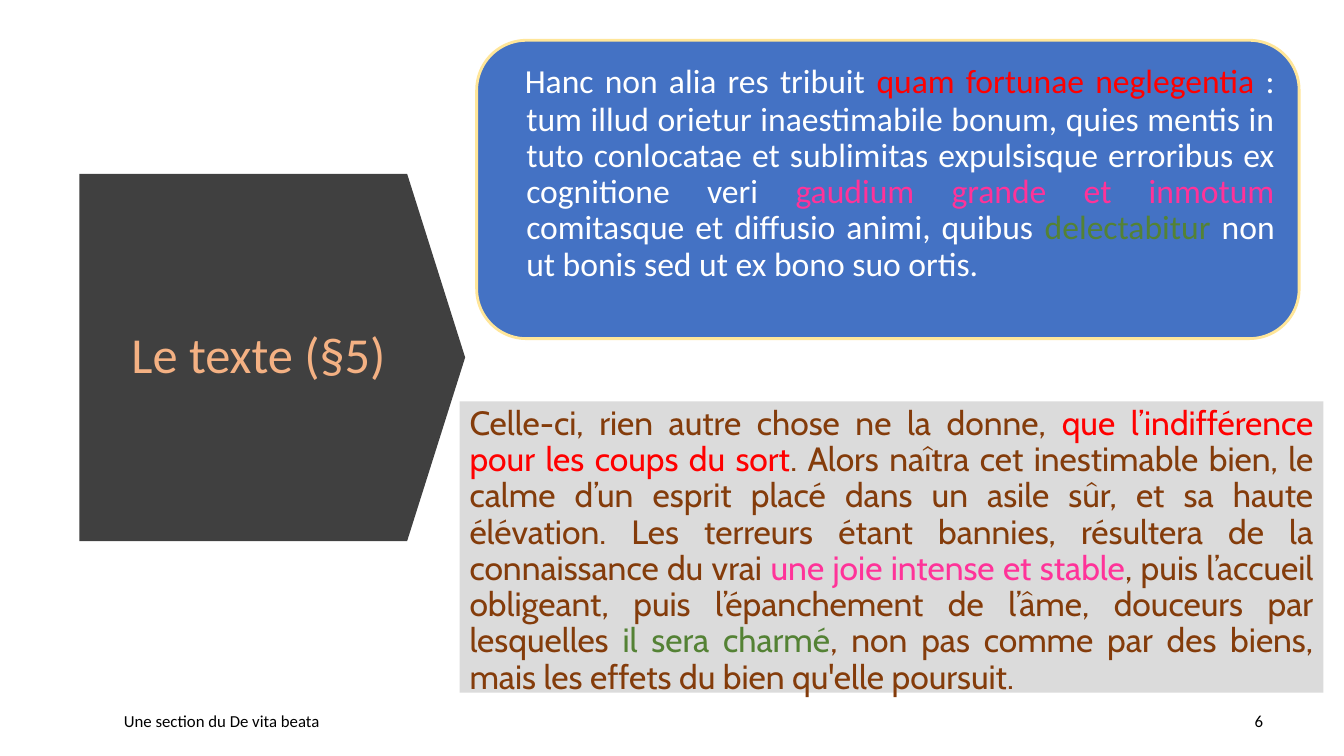
from dataclasses import dataclass
from typing import Optional

from pptx import Presentation
from pptx import util as u
from pptx.enum import shapes, text
from pptx.dml.color import RGBColor

COLORS = {
    "white": "FFFFFF", "black": "000000", "charcoal": "404040",
    "blue": "4472C4", "cream": "FFE699", "gray": "DBDBDB",
    "peach": "F4B183", "brown": "843C0B", "red": "FF0000",
    "pink": "FF3399", "green": "548235",
}
ALIGN = text.PP_ALIGN
ANCHOR = text.MSO_ANCHOR
SHAPE = shapes.MSO_SHAPE


@dataclass
class Run:
    text: str
    color: str
    size: Optional[float] = None


@dataclass
class Block:
    box: tuple[float, float, float, float]  # left, top, width, height
    runs: list[Run]
    size: float
    font: str = "Calibri"
    align: ALIGN = ALIGN.LEFT
    anchor: ANCHOR = ANCHOR.MIDDLE
    line_spacing: float = 1.0
    space_before: float = 0
    space_after: float = 0
    hanging: float = 0
    preset: Optional[SHAPE] = None
    fill: str = ""
    line: str = ""


def add_panel(slide, preset: SHAPE, box: tuple, fill: str, line: str = ""):
    """Add a filled preset shape without a shadow."""
    shape = slide.shapes.add_shape(preset, *map(u.Pt, box))
    shape.shadow.inherit = False
    shape.fill.solid()
    shape.fill.fore_color.rgb = RGBColor.from_string(COLORS[fill])
    if line:
        shape.line.color.rgb = RGBColor.from_string(COLORS[line])
        shape.line.width = u.Pt(2)
    else:
        shape.line.fill.background()
    return shape


def add_block(slide, block: Block) -> None:
    """Add one paragraph, in a panel or in a plain text box."""
    if block.preset is None:
        shape = slide.shapes.add_textbox(*map(u.Pt, block.box))
    else:
        shape = add_panel(slide, block.preset, block.box, block.fill, block.line)
    frame = shape.text_frame
    frame.word_wrap = True
    frame.vertical_anchor = block.anchor
    frame.margin_left = frame.margin_right = u.Pt(7.2)
    frame.margin_top = frame.margin_bottom = u.Pt(3.6)

    paragraph = frame.paragraphs[0]
    paragraph.alignment = block.align
    paragraph.line_spacing = block.line_spacing
    paragraph.space_before = u.Pt(block.space_before)
    paragraph.space_after = u.Pt(block.space_after)
    if block.hanging:
        properties = paragraph._p.get_or_add_pPr()
        properties.set("marL", str(u.Pt(block.hanging)))
        properties.set("indent", str(-u.Pt(block.hanging)))
    for item in block.runs:
        run = paragraph.add_run()
        run.text = item.text
        run.font.name = block.font
        run.font.size = u.Pt(item.size or block.size)
        run.font.color.rgb = RGBColor.from_string(COLORS[item.color])


LATIN = Block(
    (340.5, 28.8, 587.5, 213.1),
    [
        Run(" ", "white", 28),
        Run(" Hanc non alia res tribuit ", "white"),
        Run("quam fortunae neglegentia ", "red"),
        Run(": tum illud orietur inaestimabile bonum, quies mentis in tuto "
            "conlocatae et sublimitas expulsisque erroribus ex cognitione veri ",
            "white"),
        Run("gaudium grande et inmotum", "pink"),
        Run(" comitasque et diffusio animi, quibus ", "white"),
        Run("delectabitur", "green"),
        Run(" non ut bonis sed ut ex bono suo ortis.", "white"),
    ],
    size=24, align=ALIGN.JUSTIFY, anchor=ANCHOR.TOP, line_spacing=0.9,
    space_before=10, hanging=18, preset=SHAPE.ROUNDED_RECTANGLE,
    fill="blue", line="cream",
)
TITLE = Block(
    (81.4, 154.8, 206.6, 200.2), [Run("Le texte (§5)", "peach")],
    size=36, align=ALIGN.CENTER, line_spacing=0.9,
)
FRENCH = Block(
    (328.3, 286.6, 617, 208.1),
    [
        Run("Celle-ci, rien autre chose ne la donne, ", "brown"),
        Run("que l’indifférence pour les coups du sort", "red"),
        Run(". Alors naîtra cet inestimable bien, le calme d’un esprit placé "
            "dans un asile sûr, et sa haute élévation. Les terreurs étant "
            "bannies, résultera de la connaissance du vrai ", "brown"),
        Run("une joie intense et stable", "pink"),
        Run(", puis l’accueil obligeant, puis l’épanchement de l’âme, "
            "douceurs par lesquelles ", "brown"),
        Run("il sera charmé", "green"),
        Run(", non pas comme par des biens, mais les effets du bien qu'elle "
            "poursuit.", "brown"),
    ],
    size=24, font="Cabin", align=ALIGN.JUSTIFY, anchor=ANCHOR.TOP,
    line_spacing=0.9, space_before=10, preset=SHAPE.RECTANGLE, fill="gray",
)
FOOTER = Block(
    (81.4, 500.4, 488.9, 28.8), [Run("Une section du De vita beata", "black")],
    size=12, space_after=6,
)
PAGE_NUMBER = Block(
    (869, 500.4, 40.3, 28.8), [Run("6", "black")],
    size=12, align=ALIGN.RIGHT, space_after=6,
)


def main() -> None:
    presentation = Presentation()
    presentation.slide_width = u.Pt(960)
    presentation.slide_height = u.Pt(540)
    slide = presentation.slides.add_slide(presentation.slide_layouts[6])

    # Title arrow, turned to point right
    arrow = add_panel(slide, SHAPE.DOWN_ARROW, (63.3, 117.5, 262.3, 275.6), "charcoal")
    arrow.adjustments[0] = 1
    arrow.adjustments[1] = 0.158
    arrow.rotation = 270

    # Texts, title and footer
    for block in (LATIN, TITLE, FRENCH, FOOTER, PAGE_NUMBER):
        add_block(slide, block)

    presentation.save("out.pptx")


if __name__ == "__main__":
    main()
